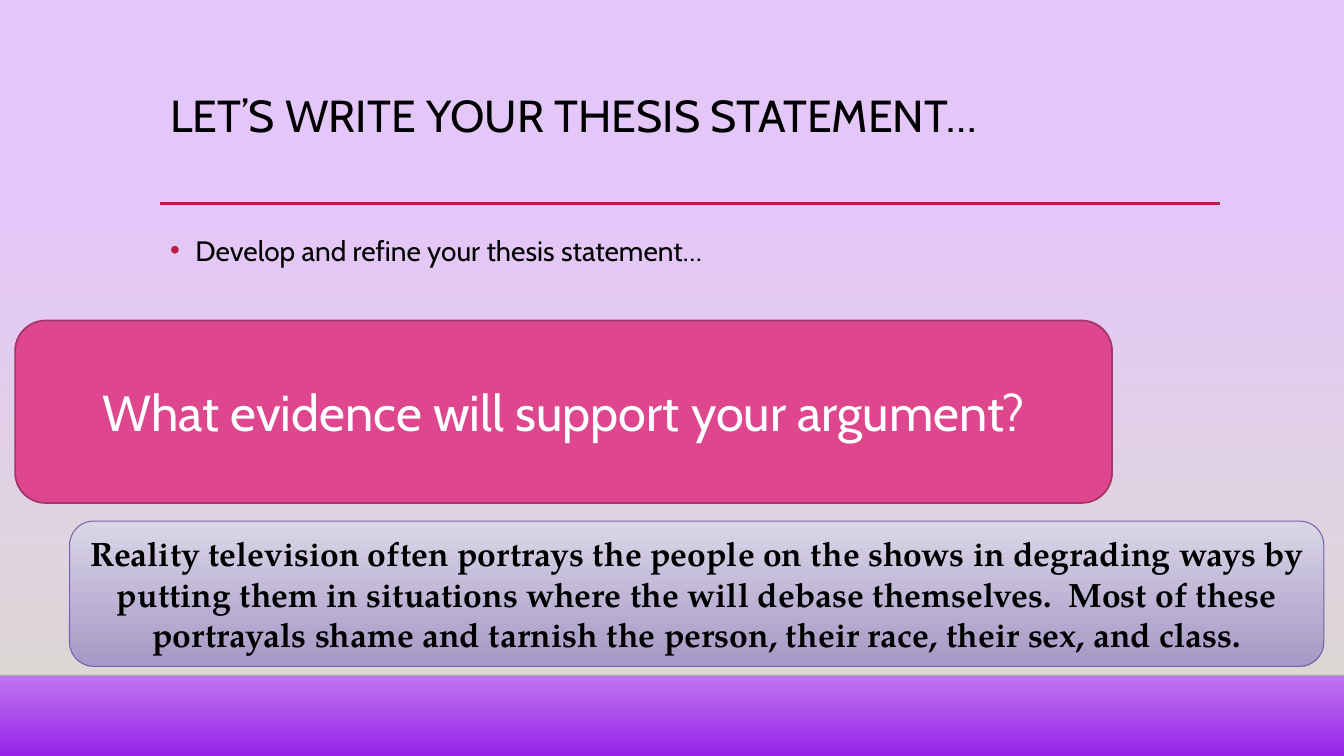
from lxml.etree import SubElement
from pptx import Presentation
from pptx.dml.color import RGBColor
from pptx.enum.shapes import MSO_CONNECTOR, MSO_SHAPE
from pptx.enum.text import MSO_ANCHOR, PP_ALIGN
from pptx.oxml.ns import qn
from pptx.util import Inches, Pt

HEADING_FONT = "Cabin"
THESIS_FONT = "TeX Gyre Pagella"
BLACK = "000000"
CRIMSON = "B71E42"


def color(value):
    return RGBColor.from_string(value)


def set_alpha(color_element, percent):
    SubElement(color_element, qn("a:alpha"), val=str(percent * 1000))


def fill_gradient(fill, owner, stops):
    """Fill from top to bottom with (position, colour, opacity) stops."""
    fill.gradient()
    fill.gradient_angle = 270
    stop_list = next(owner.iter(qn("a:gsLst")))
    for old_stop in list(stop_list):
        stop_list.remove(old_stop)
    for position, value, opacity in stops:
        stop = SubElement(stop_list, qn("a:gs"), pos=str(position * 1000))
        stop_color = SubElement(stop, qn("a:srgbClr"), val=value)
        if opacity < 100:
            set_alpha(stop_color, opacity)


def add_rule(slide, left, right, top, value, width, opacity=100):
    rule = slide.shapes.add_connector(
        MSO_CONNECTOR.STRAIGHT, Inches(left), Inches(top), Inches(right), Inches(top))
    rule.line.color.rgb = color(value)
    rule.line.width = Pt(width)
    SubElement(rule._element.spPr, qn("a:effectLst"))
    if opacity < 100:
        set_alpha(next(rule._element.iter(qn("a:srgbClr"))), opacity)


def add_panel(slide, kind, left, top, width, height):
    shape = slide.shapes.add_shape(
        kind, Inches(left), Inches(top), Inches(width), Inches(height))
    shape.shadow.inherit = False
    return shape


def set_outline(shape, value, width):
    shape.line.color.rgb = color(value)
    shape.line.width = Pt(width)


def write(paragraph, text, size, value, font=HEADING_FONT, bold=False):
    run = paragraph.add_run()
    run.text = text
    run.font.name = font
    run.font.size = Pt(size)
    run.font.bold = bold
    run.font.color.rgb = color(value)


def write_centered(shape, text, size, value, **style):
    frame = shape.text_frame
    frame.word_wrap = True
    frame.vertical_anchor = MSO_ANCHOR.MIDDLE
    paragraph = frame.paragraphs[0]
    paragraph.alignment = PP_ALIGN.CENTER
    write(paragraph, text, size, value, **style)


def add_text(slide, top, height, text, size, line_spacing):
    box = slide.shapes.add_textbox(
        Inches(1.59), Inches(top), Inches(10.5), Inches(height))
    box.text_frame.word_wrap = True
    paragraph = box.text_frame.paragraphs[0]
    paragraph.line_spacing = line_spacing
    write(paragraph, text, size, BLACK)
    return paragraph


def add_bullet(paragraph, value):
    properties = paragraph._p.get_or_add_pPr()
    properties.set("marL", str(Inches(0.25)))
    properties.set("indent", str(Inches(-0.25)))
    bullet_color = SubElement(properties, qn("a:buClr"))
    SubElement(bullet_color, qn("a:srgbClr"), val=value)
    SubElement(properties, qn("a:buFont"), typeface="Arial")
    SubElement(properties, qn("a:buChar"), char="•")


def main():
    presentation = Presentation()
    presentation.slide_width = Inches(13.33)
    presentation.slide_height = Inches(7.5)
    slide = presentation.slides.add_slide(presentation.slide_layouts[6])

    # Background with a fading floor
    fill_gradient(slide.background.fill, slide.element, [
        (0, "E4C7F9", 100), (74, "E4C7F9", 100),
        (83, "D7AAF6", 100), (100, "9622E7", 100)])
    fade = add_panel(slide, MSO_SHAPE.RECTANGLE, 0, 2.21, 13.33, 4.49)
    fill_gradient(fade.fill, fade._element,
                  [(0, "DFDBD5", 0), (100, "DFDBD5", 100)])
    fade.line.fill.background()
    add_rule(slide, 0, 13.33, 6.7, "000001", 1, opacity=20)

    # Heading and bullet
    add_rule(slide, 1.59, 12.1, 2.02, CRIMSON, 2.5)
    add_text(slide, 0.88, 1.15, "LET’S WRITE YOUR THESIS STATEMENT…", 32, 0.9)
    bullet = add_text(slide, 2.2, 3.77,
                      "Develop and refine your thesis statement…", 20, 1.2)
    add_bullet(bullet, CRIMSON)

    # Question panel
    question = add_panel(slide, MSO_SHAPE.ROUNDED_RECTANGLE, 0.15, 3.18, 10.88, 1.81)
    question.fill.solid()
    question.fill.fore_color.rgb = color("DE478E")
    set_outline(question, "A43569", 1.25)
    write_centered(question, "What evidence will support your argument?", 36, "FFFFFF")

    # Thesis panel
    thesis = add_panel(slide, MSO_SHAPE.ROUNDED_RECTANGLE, 0.69, 5.17, 12.44, 1.44)
    fill_gradient(thesis.fill, thesis._element,
                  [(0, "DCD8E8", 100), (100, "A395C6", 92)])
    set_outline(thesis, "795FAF", 0.75)
    write_centered(
        thesis,
        "Reality television often portrays the people on the shows in degrading "
        "ways by putting them in situations where the will debase themselves.  "
        "Most of these portrayals shame and tarnish the person, their race, "
        "their sex, and class.",
        24, BLACK, font=THESIS_FONT, bold=True)

    presentation.save("out.pptx")


if __name__ == "__main__":
    main()
